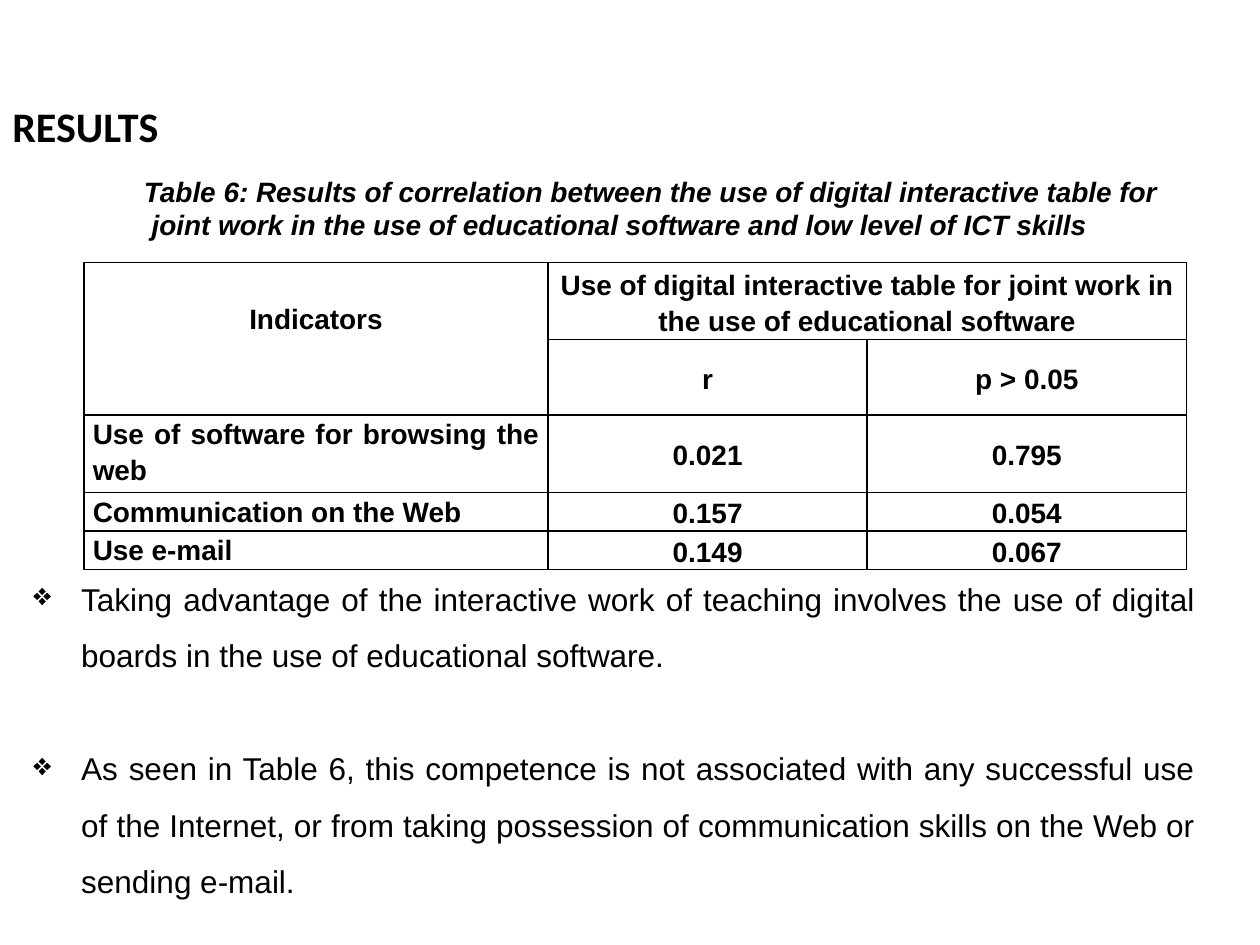
from lxml.etree import SubElement
from pptx import Presentation
from pptx.dml.color import RGBColor
from pptx.enum.text import MSO_ANCHOR, PP_ALIGN
from pptx.oxml import parse_xml
from pptx.oxml.ns import nsdecls, qn
from pptx.util import Inches, Pt

COLS, ROWS = 120, 90
WIDTH, HEIGHT = Inches(10), Inches(7.5)


def x(cols):
    return round(WIDTH * cols / COLS)


def y(rows):
    return round(HEIGHT * rows / ROWS)


def color(value):
    return RGBColor.from_string(value)


def write(p, text, font="Arial", size=16, ink="000000", bold=False, italic=False,
          align=PP_ALIGN.LEFT, spacing=1.0, before=0, margin=0, indent=0, bullet=None):
    p.alignment, p.line_spacing = align, spacing
    if before:
        p.space_before = Pt(before)
    pPr = p._p.get_or_add_pPr()
    pPr.set("marL", str(int(Inches(margin))))
    pPr.set("indent", str(int(Inches(indent))))
    if bullet:
        SubElement(pPr, qn("a:buChar")).set("char", bullet)
    r = p.add_run()
    r.text = text
    r.font.name, r.font.size = font, Pt(size)
    r.font.bold, r.font.italic = bold, italic
    r.font.color.rgb = color(ink)


class Deck:
    """Holds the table style and the current slide, placing elements on a grid."""

    def __init__(self, line="000000", width=1):
        self.line, self.width = line, width
        self.prs = Presentation()
        self.prs.slide_width, self.prs.slide_height = WIDTH, HEIGHT
        self.s = self.prs.slides.add_slide(self.prs.slide_layouts[6])

    def text(self, left, top, width, height, paragraphs, anchor=MSO_ANCHOR.TOP, **fmt):
        tf = self.s.shapes.add_textbox(x(left), y(top), x(width), y(height)).text_frame
        tf.word_wrap, tf.vertical_anchor = True, anchor
        for i, (text, before) in enumerate(paragraphs):
            p = tf.add_paragraph() if i else tf.paragraphs[0]
            write(p, text, before=before, **fmt)

    def border(self, cell):
        tcPr = cell._tc.get_or_add_tcPr()
        for i, side in enumerate("LRTB"):
            tcPr.insert(i, parse_xml(
                f'<a:ln{side} {nsdecls("a")} w="{int(Pt(self.width))}"><a:solidFill>'
                f'<a:srgbClr val="{self.line}"/></a:solidFill></a:ln{side}>'))

    def table(self, left, top, widths, heights, data, merges):
        frame = self.s.shapes.add_table(len(heights), len(widths), x(left), y(top),
                                        x(sum(widths)), y(sum(heights)))
        tbl = frame.table
        tbl.first_row = tbl.horz_banding = False
        for column, width in zip(tbl.columns, widths):
            column.width = x(width)
        for row, height in zip(tbl.rows, heights):
            row.height = y(height)
        for first, last in merges:
            tbl.cell(*first).merge(tbl.cell(*last))
        for i, values in enumerate(data):
            for j, text in enumerate(values):
                cell = tbl.cell(i, j)
                cell.fill.background()
                self.border(cell)
                cell.margin_left = cell.margin_right = Inches(0.07)
                cell.margin_top = cell.margin_bottom = 0
                cell.vertical_anchor = MSO_ANCHOR.MIDDLE if j else MSO_ANCHOR.TOP
                if text:
                    align = PP_ALIGN.JUSTIFY if i > 1 and j == 0 else PP_ALIGN.CENTER
                    write(cell.text_frame.paragraphs[0], text, bold=True,
                          align=align, spacing=1.15)
        tbl.cell(0, 0).margin_top = y(3.5)


def main():
    deck = Deck()
    deck.text(0, 1, 95, 14, [("RESULTS", 0)], anchor=MSO_ANCHOR.BOTTOM,
              font="Calibri", size=24, bold=True)
    deck.table(8, 25, [44.2, 30.4, 30.4], [7, 6.8, 6.8, 3.5, 3.5], [
        ["Indicators", "Use of digital interactive table for joint work in "
         "the use of educational software", ""],
        ["", "r", "p > 0.05"],
        ["Use of software for browsing the web", "0.021", "0.795"],
        ["Communication on the Web", "0.157", "0.054"],
        ["Use e-mail", "0.149", "0.067"],
    ], merges=[((0, 0), (1, 0)), ((0, 1), (0, 2))])
    deck.text(5, 16, 108, 10, [
        ("Table 6: Results of correlation between the use of digital interactive table for "
         "joint work in the use of educational software and low level of ICT skills", 0),
    ], bold=True, italic=True, align=PP_ALIGN.CENTER, indent=0.5)
    deck.text(2, 52.8, 113, 34, [
        ("Taking advantage of the interactive work of teaching involves the use of digital "
         "boards in the use of educational software.", 0),
        ("As seen in Table 6, this competence is not associated with any successful use of the "
         "Internet, or from taking possession of communication skills on the Web or "
         "sending e-mail.", 32),
    ], size=18, align=PP_ALIGN.JUSTIFY, spacing=1.5, margin=0.38, indent=-0.38, bullet="❖")
    deck.prs.save("out.pptx")


if __name__ == "__main__":
    main()
